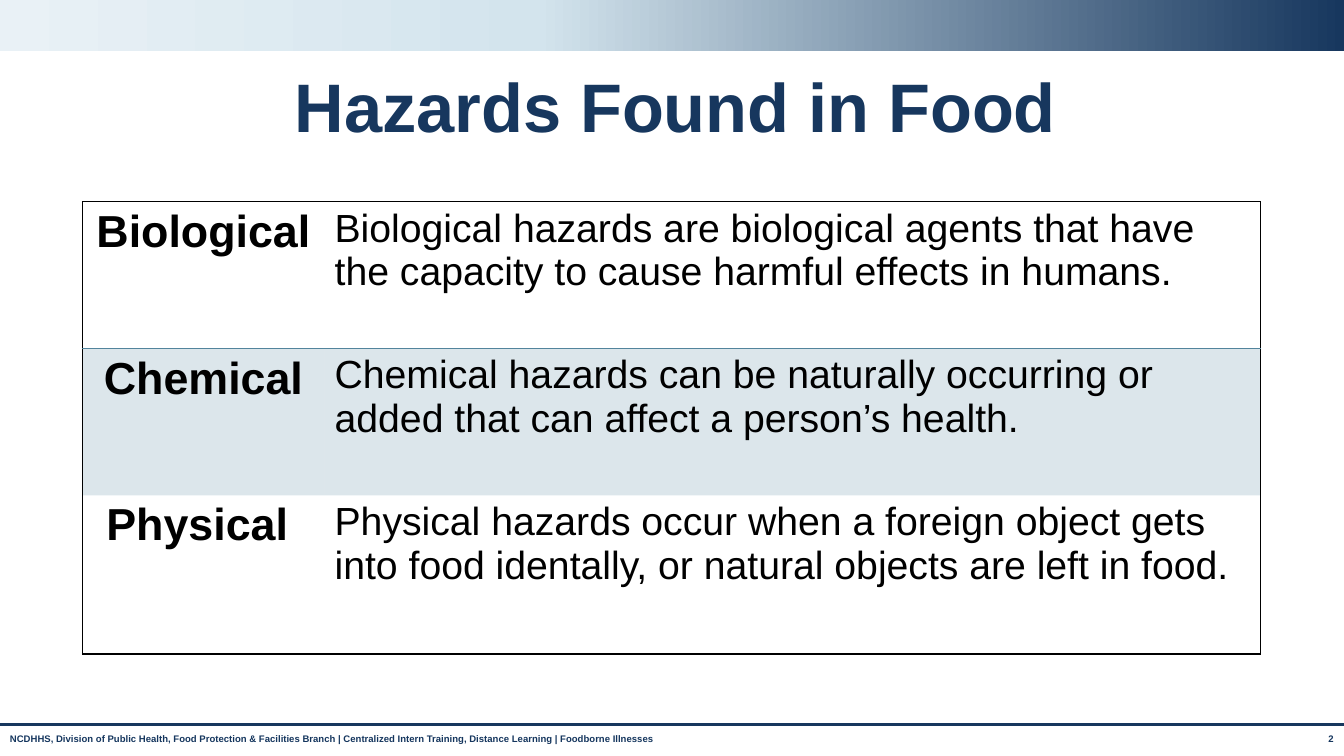
"""Build the slide "Hazards Found in Food" with its table of three hazard types."""
from copy import deepcopy

from lxml import etree
from pptx import Presentation
from pptx import util as u
from pptx.dml.color import RGBColor
from pptx.enum import shapes, text
from pptx.oxml.ns import qn

NAVY = RGBColor(0x17, 0x37, 0x5E)
FOOTER_NAVY = RGBColor(0x15, 0x36, 0x5E)
PALE = RGBColor(0xD3, 0xE4, 0xED)
PALEST = RGBColor(0xE9, 0xF1, 0xF6)
TEAL = RGBColor(0x52, 0x84, 0x9C)
BLACK = RGBColor(0, 0, 0)
LEFT, CENTER, RIGHT = text.PP_ALIGN.LEFT, text.PP_ALIGN.CENTER, text.PP_ALIGN.RIGHT


def write(frame, words, align, size, color, bold):
    frame.word_wrap = True
    para = frame.paragraphs[0]
    para.alignment = align
    span = para.add_run()
    span.text = words
    span.font.color.rgb = color
    for name, value in {"name": "Arial", "size": u.Pt(size), "bold": bold}.items():
        setattr(span.font, name, value)
    return para


def add_border(cell, side, color):
    line = etree.SubElement(cell._tc.get_or_add_tcPr(), qn(f"a:ln{side}"), w=str(u.Pt(1)))
    if color is None:
        etree.SubElement(line, qn("a:noFill"))
    else:
        solid = etree.SubElement(line, qn("a:solidFill"))
        etree.SubElement(solid, qn("a:srgbClr"), val=str(color))


deck = Presentation()
deck.slide_width, deck.slide_height = u.Cm(33.87), u.Cm(19.05)
page = deck.slides.add_slide(deck.slide_layouts[6])

band = page.shapes.add_shape(shapes.MSO_SHAPE.RECTANGLE, 0, 0, deck.slide_width, u.Cm(1.28))
band.shadow.inherit = False
band.line.fill.background()
band.fill.gradient()
band.fill.gradient_angle = 180
stop_list = band.fill._fill._gradFill.gsLst
stop_list.append(deepcopy(stop_list[-1]))
for stop, position, color in zip(band.fill.gradient_stops, (0, 0.6, 1), (NAVY, PALE, PALEST)):
    stop.position = position
    stop.color.rgb = color

rule = page.shapes.add_connector(
    shapes.MSO_CONNECTOR.STRAIGHT, 0, u.Cm(18.26), deck.slide_width, u.Cm(18.26))
rule.line.color.rgb = NAVY
rule.line.width = u.Pt(1.75)
etree.SubElement(rule._element.spPr, qn("a:effectLst"))

FOOTER = ("NCDHHS, Division of Public Health, Food Protection & Facilities Branch | "
          "Centralized Intern Training, Distance Learning | Foodborne Illnesses")
TEXT_BOXES = [
    (FOOTER, (0, 18.34, 29.62, 0.74), LEFT, 6.8, FOOTER_NAVY),
    ("2", (32.36, 18.34, 1.5, 0.76), RIGHT, 6.8, FOOTER_NAVY),
    ("Hazards Found in Food", (2.49, 1.73, 29.06, 2.08), CENTER, 49, NAVY),
]
for words, place, align, size, color in TEXT_BOXES:
    box = page.shapes.add_textbox(*map(u.Cm, place))
    para = write(box.text_frame, words, align, size, color, True)
box.text_frame.vertical_anchor = text.MSO_ANCHOR.MIDDLE
para.line_spacing = 0.9

HAZARDS = [
    ("Biological ", "Biological hazards are biological agents that have "
     "the capacity to cause harmful effects in humans."),
    ("Chemical", "Chemical hazards can be naturally occurring or "
     "added that can affect a person’s health."),
    ("Physical ", "Physical hazards occur when a foreign object gets "
     "into food identally, or natural objects are left in food."),
]
table = page.shapes.add_table(
    3, 2, u.Cm(2.08), u.Cm(5.08), u.Cm(29.69), u.Cm(11.4)).table
table.first_row = table.horz_banding = False
for column, width in zip(table.columns, (6.1, 23.59)):
    column.width = u.Cm(width)
for row, height in zip(table.rows, (3.7, 3.7, 4)):
    row.height = u.Cm(height)

ROW_EDGES = [BLACK, TEAL, None, BLACK]
COLUMN_EDGES = [BLACK, None, BLACK]
COLUMN_FORMATS = [(CENTER, 32, True), (LEFT, 28, False)]
for r, hazard in enumerate(HAZARDS):
    for c, (words, (align, size, bold)) in enumerate(zip(hazard, COLUMN_FORMATS)):
        cell = table.cell(r, c)
        write(cell.text_frame, words, align, size, BLACK, bold)
        edges = (*COLUMN_EDGES[c:c + 2], *ROW_EDGES[r:r + 2])
        for side, color in zip("LRTB", edges):
            add_border(cell, side, color)
        if r == 1:
            cell.fill.solid()
            cell.fill.fore_color.rgb = TEAL
            tint = cell._tc.tcPr.find(qn("a:solidFill")).find(qn("a:srgbClr"))
            etree.SubElement(tint, qn("a:alpha"), val="20000")
        else:
            cell.fill.background()

deck.save("out.pptx")
